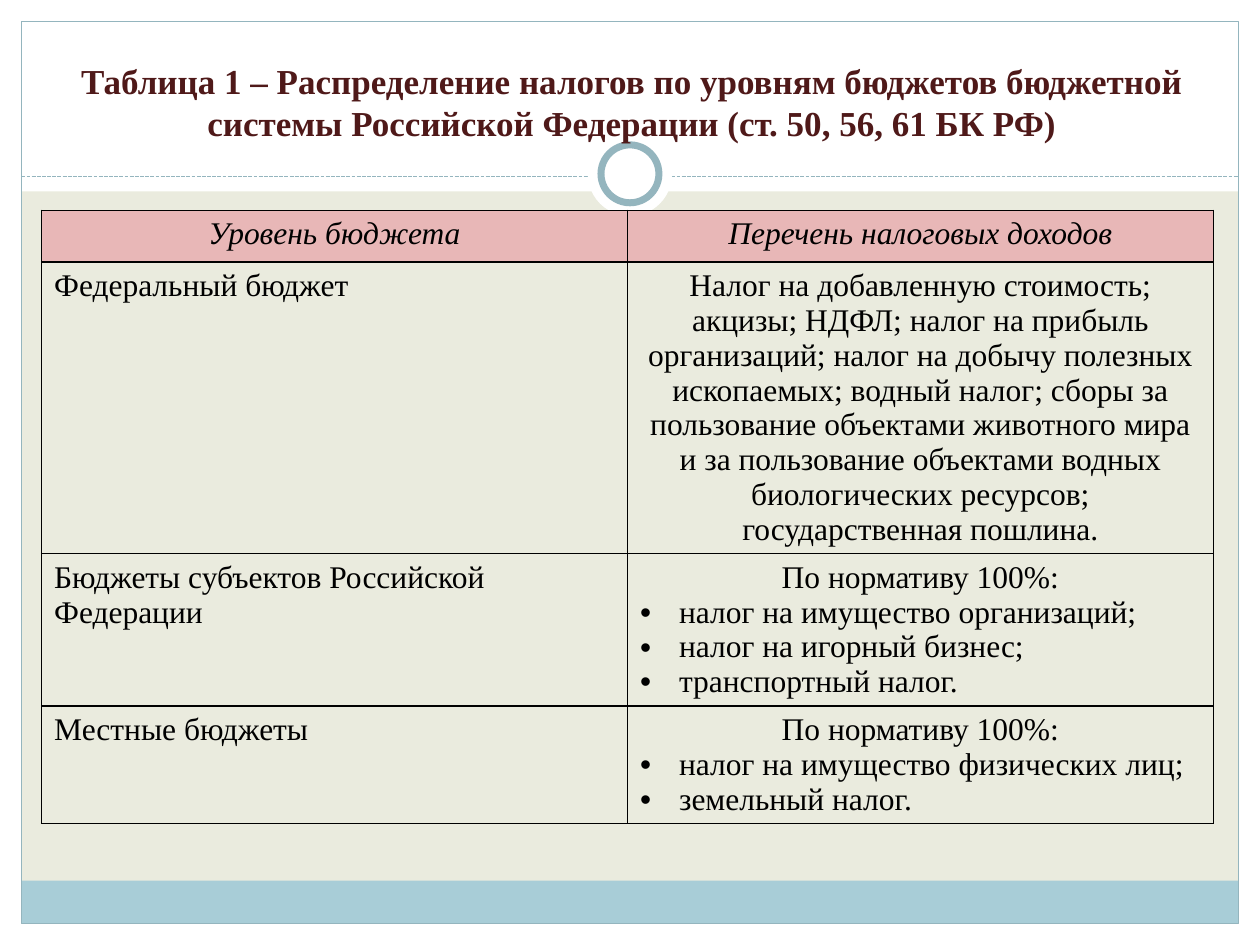
from lxml import etree
from pptx import Presentation
from pptx.dml.color import RGBColor
from pptx.enum.dml import MSO_LINE
from pptx.enum.shapes import MSO_CONNECTOR, MSO_SHAPE
from pptx.enum.text import MSO_ANCHOR, MSO_AUTO_SIZE, PP_ALIGN
from pptx.oxml.ns import qn
from pptx.util import Inches, Pt

RECT, OVAL = MSO_SHAPE.RECTANGLE, MSO_SHAPE.OVAL
LEFT, CENTER, JUSTIFY = PP_ALIGN.LEFT, PP_ALIGN.CENTER, PP_ALIGN.JUSTIFY
FONT = "Times New Roman"
WIDTH, HEIGHT = 10, 7.5
MARGIN = 0.17
COLORS = {
    "background": "EAEBDE", "white": "FFFFFF", "footer": "A8CDD7",
    "accent": "94B5BE", "title": "4F1919", "header": "E8B7B7", "text": "000000",
}
HEADINGS = ["Уровень бюджета", "Перечень налоговых доходов"]
NORM = "По нормативу 100%:"
# budget level, introduction, listed taxes, row height
BUDGETS = [
    ("Федеральный бюджет",
     "Налог на добавленную стоимость; акцизы; НДФЛ; налог на прибыль "
     "организаций; налог на добычу полезных ископаемых; водный налог; сборы за "
     "пользование объектами животного мира и за пользование объектами водных "
     "биологических ресурсов; государственная пошлина.", [], 2.31),
    ("Бюджеты субъектов Российской Федерации", NORM,
     ["налог на имущество организаций;", "налог на игорный бизнес;",
      "транспортный налог."], 1.21),
    ("Местные бюджеты", NORM,
     ["налог на имущество физических лиц;", "земельный налог."], 0.93),
]


def color(name):
    return RGBColor.from_string(COLORS[name])


def add_block(slide, kind, box, fill=None, line=None, weight=0.75):
    block = slide.shapes.add_shape(kind, *map(Inches, box))
    block.shadow.inherit = False
    if fill:
        block.fill.solid()
        block.fill.fore_color.rgb = color(fill)
    else:
        block.fill.background()
    if line:
        block.line.color.rgb = color(line)
        block.line.width = Pt(weight)
    else:
        block.line.fill.background()


def add_divider(slide, left, right, y):
    divider = slide.shapes.add_connector(
        MSO_CONNECTOR.STRAIGHT, Inches(left), Inches(y), Inches(right), Inches(y))
    divider.line.color.rgb = color("accent")
    divider.line.width = Pt(0.75)
    divider.line.dash_style = MSO_LINE.SQUARE_DOT
    divider._element.spPr.find(qn("a:ln")).find(qn("a:prstDash")).set("val", "sysDash")
    etree.SubElement(divider._element.spPr, qn("a:effectLst"))


def add_frame(slide, width, height):
    inner = (MARGIN, MARGIN, width - 2 * MARGIN, height - 2 * MARGIN)
    for edge in [(0, height - MARGIN, width, MARGIN), (0, 0, width, 1.52),
                 (0, 0, MARGIN, height), (width - MARGIN, 0, MARGIN, height)]:
        add_block(slide, RECT, edge, "white")
    add_block(slide, RECT, (MARGIN, 6.99, inner[2], 0.34), "footer")
    add_block(slide, RECT, inner, line="accent")
    add_divider(slide, MARGIN, width - MARGIN, 1.4)
    for size, line in [(0.67, None), (0.46, "accent")]:
        circle = ((width - size) / 2, 1.38 - size / 2, size, size)
        add_block(slide, OVAL, circle, "white", line, 4)


def write(paragraph, text, align, size=18, tint="text", bold=False, italic=False):
    paragraph.alignment = align
    run = paragraph.add_run()
    run.text = text
    font = run.font
    font.name, font.size, font.bold, font.italic = FONT, Pt(size), bold, italic
    font.color.rgb = color(tint)


def place_title(slide, box):
    title = slide.shapes.title
    title.left, title.top, title.width, title.height = map(Inches, box)
    frame = title.text_frame
    frame.word_wrap = True
    frame.auto_size = MSO_AUTO_SIZE.NONE
    frame.vertical_anchor = MSO_ANCHOR.BOTTOM
    write(frame.paragraphs[0],
          "Таблица 1 – Распределение налогов по уровням бюджетов бюджетной "
          "системы Российской Федерации (ст. 50, 56, 61 БК РФ)",
          CENTER, 20, "title", bold=True)
    # The title's descenders lie over the ring
    title._element.getparent().append(title._element)


def add_bullet(paragraph):
    properties = paragraph._p.get_or_add_pPr()
    properties.set("marL", str(Inches(0.31)))
    properties.set("indent", str(-Inches(0.31)))
    etree.SubElement(properties, qn("a:buFont"), typeface="Arial")
    etree.SubElement(properties, qn("a:buChar"), char="•")


def style_cell(cell, fill=None):
    if fill:
        cell.fill.solid()
        cell.fill.fore_color.rgb = color(fill)
    else:
        cell.fill.background()
    properties = cell._tc.get_or_add_tcPr()
    for position, side in enumerate(["lnL", "lnR", "lnT", "lnB"]):
        border = etree.Element(qn(f"a:{side}"), w=str(Pt(1)))
        solid = etree.SubElement(border, qn("a:solidFill"))
        etree.SubElement(solid, qn("a:srgbClr"), val=COLORS["text"])
        properties.insert(position, border)


def add_budget_table(slide, left, top, width):
    heights = [0.41] + [budget[-1] for budget in BUDGETS]
    table = slide.shapes.add_table(
        len(heights), len(HEADINGS), Inches(left), Inches(top),
        Inches(width), Inches(sum(heights))).table
    table.horz_banding = False
    for row, height in zip(table.rows, heights):
        row.height = Inches(height)
    for cell, heading in zip(table.rows[0].cells, HEADINGS):
        style_cell(cell, "header")
        write(cell.text_frame.paragraphs[0], heading, CENTER, italic=True)
    for number, (level, intro, taxes, _) in enumerate(BUDGETS, 1):
        level_cell, income_cell = table.rows[number].cells
        style_cell(level_cell)
        style_cell(income_cell)
        write(level_cell.text_frame.paragraphs[0], level, LEFT)
        income = income_cell.text_frame
        write(income.paragraphs[0], intro, CENTER)
        for tax in taxes:
            paragraph = income.add_paragraph()
            write(paragraph, tax, JUSTIFY)
            add_bullet(paragraph)


def main():
    deck = Presentation()
    deck.slide_width, deck.slide_height = Inches(WIDTH), Inches(HEIGHT)
    slide = deck.slides.add_slide(deck.slide_layouts[5])
    slide.background.fill.solid()
    slide.background.fill.fore_color.rgb = color("background")
    add_frame(slide, WIDTH, HEIGHT)
    place_title(slide, (0.35, 0.36, 9.33, 0.83))
    add_budget_table(slide, 0.33, 1.67, 9.3)
    deck.save("out.pptx")


if __name__ == "__main__":
    main()
